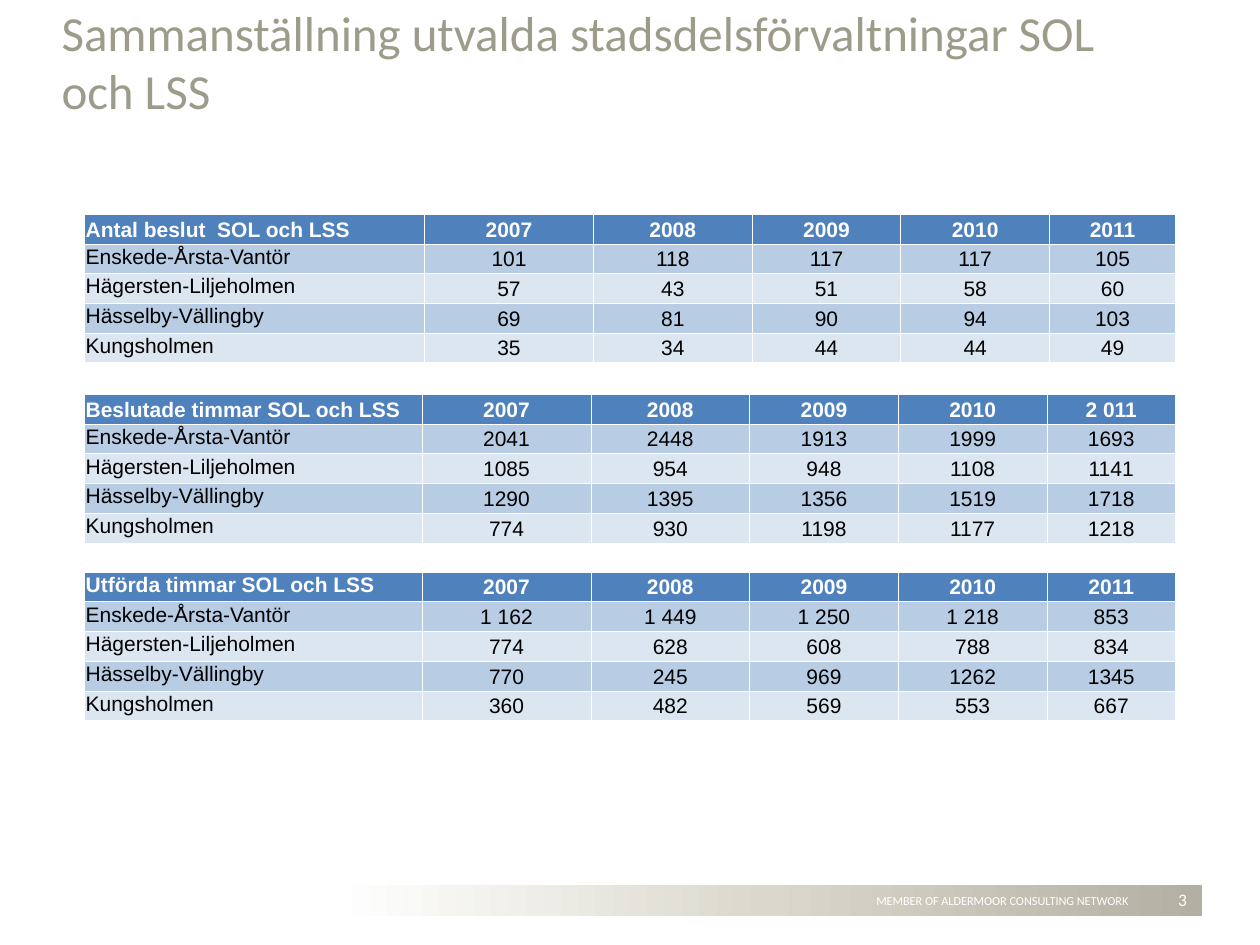
from copy import deepcopy

from lxml.etree import SubElement
from pptx import Presentation
from pptx.dml.color import RGBColor
from pptx.enum.shapes import MSO_SHAPE
from pptx.enum.text import MSO_ANCHOR, MSO_AUTO_SIZE, PP_ALIGN
from pptx.oxml.ns import qn
from pptx.util import Inches, Pt

COLORS = {
    "title": "9D9B8A",
    "white": "FFFFFF",
    "black": "000000",
    "header": "4F81BD",
    "dark_band": "B8CCE4",
    "light_band": "DCE6F1",
    "footer_dark": "B2B0A2",
    "footer_middle": "DAD8CC",
}
GRID_COLUMNS, GRID_ROWS = 100, 75
TABLE_LEFT, ROW_HEIGHT = 6.7, 2.36
YEARS = ["2007", "2008", "2009", "2010", "2011"]
DISTRICTS = ["Enskede-Årsta-Vantör", "Hägersten-Liljeholmen",
             "Hässelby-Vällingby", "Kungsholmen"]
YEAR_WIDTHS = [13.4, 12.6, 11.8, 11.8]
TABLES = [
    ("Antal beslut  SOL och LSS", YEARS, 17, [27, *YEAR_WIDTHS, 10], MSO_ANCHOR.MIDDLE, [
        ["101", "118", "117", "117", "105"],
        ["57", "43", "51", "58", "60"],
        ["69", "81", "90", "94", "103"],
        ["35", "34", "44", "44", "49"],
    ]),
    ("Beslutade timmar SOL och LSS", [*YEARS[:-1], "2 011"], 31.3,
     [26.8, *YEAR_WIDTHS, 10.2], MSO_ANCHOR.MIDDLE, [
        ["2041", "2448", "1913", "1999", "1693"],
        ["1085", "954", "948", "1108", "1141"],
        ["1290", "1395", "1356", "1519", "1718"],
        ["774", "930", "1198", "1177", "1218"],
    ]),
    ("Utförda timmar SOL och LSS", YEARS, 45.4,
     [26.8, *YEAR_WIDTHS, 10.2], MSO_ANCHOR.TOP, [
        ["1 162", "1 449", "1 250", "1 218", "853"],
        ["774", "628", "608", "788", "834"],
        ["770", "245", "969", "1262", "1345"],
        ["360", "482", "569", "553", "667"],
    ]),
]


class SlideBuilder:
    def __init__(self, deck):
        self.slide = deck.slides.add_slide(deck.slide_layouts[6])
        self.column = deck.slide_width / GRID_COLUMNS
        self.row = deck.slide_height / GRID_ROWS

    def place(self, left, top, width, height):
        return (round(left * self.column), round(top * self.row),
                round(width * self.column), round(height * self.row))

    def color(self, name):
        return RGBColor.from_string(COLORS[name])

    def style(self, para, font, size, color, align, bold=False):
        para.alignment = align
        para.font.name = font
        para.font.size = Pt(size)
        para.font.bold = bold
        para.font.color.rgb = self.color(color)

    def text(self, area, words, size, color, align, anchor, wrap=True):
        frame = self.slide.shapes.add_textbox(*self.place(*area)).text_frame
        frame.word_wrap = wrap
        frame.auto_size = MSO_AUTO_SIZE.NONE if wrap else MSO_AUTO_SIZE.SHAPE_TO_FIT_TEXT
        frame.vertical_anchor = anchor
        frame.text = words
        self.style(frame.paragraphs[0], "Calibri", size, color, align)

    def gradient_bar(self, area, color_names):
        bar = self.slide.shapes.add_shape(MSO_SHAPE.RECTANGLE, *self.place(*area))
        bar.shadow.inherit = False
        bar.line.fill.background()
        bar.fill.gradient()
        bar.fill.gradient_angle = 180
        stop_list = next(bar.element.iter(qn("a:gsLst")))
        stop_list.insert(1, deepcopy(stop_list[0]))
        for index, (stop, name) in enumerate(zip(bar.fill.gradient_stops, color_names)):
            stop.position = index / (len(color_names) - 1)
            stop.color.rgb = self.color(name)

    def cell(self, cell, words, fill, color, align, anchor, bold):
        cell.margin_left = cell.margin_right = cell.margin_top = Inches(0.01)
        cell.margin_bottom = 0
        cell.vertical_anchor = anchor
        cell.text = words
        self.style(cell.text_frame.paragraphs[0], "Arial", 12, color, align, bold)
        properties = cell._tc.get_or_add_tcPr()
        for side in ("lnL", "lnR", "lnT", "lnB"):
            border = SubElement(properties, qn(f"a:{side}"), w=str(Pt(0.5)))
            paint = SubElement(border, qn("a:solidFill"))
            SubElement(paint, qn("a:srgbClr"), val=COLORS["white"])
        cell.fill.solid()
        cell.fill.fore_color.rgb = self.color(fill)

    def table(self, heading, years, top, widths, heading_anchor, values):
        rows = [[heading, *years]]
        rows += [[name, *numbers] for name, numbers in zip(DISTRICTS, values)]
        area = self.place(TABLE_LEFT, top, sum(widths), ROW_HEIGHT * len(rows))
        table = self.slide.shapes.add_table(len(rows), len(widths), *area).table
        table.first_row = table.horz_banding = False
        for column, width in zip(table.columns, widths):
            column.width = round(width * self.column)
        for r, row in enumerate(rows):
            is_header = r == 0
            fill = "header" if is_header else "dark_band" if r % 2 else "light_band"
            color = "white" if is_header else "black"
            label_anchor = heading_anchor if is_header else MSO_ANCHOR.TOP
            for c, words in enumerate(row):
                align = PP_ALIGN.CENTER if c else PP_ALIGN.LEFT
                anchor = MSO_ANCHOR.MIDDLE if c else label_anchor
                self.cell(table.cell(r, c), words, fill, color, align, anchor, is_header)


def main():
    deck = Presentation()
    deck.slide_width, deck.slide_height = Inches(10), Inches(7.5)
    page = SlideBuilder(deck)
    page.gradient_bar((26.6, 70.2, 68.8, 2.5), ["footer_dark", "footer_middle", "white"])
    page.text((66.5, 70.4, 26.1, 2.2), "MEMBER OF ALDERMOOR CONSULTING NETWORK",
              7, "white", PP_ALIGN.CENTER, MSO_ANCHOR.TOP, wrap=False)
    page.text((3.9, 2.1, 89.4, 7.9),
              "Sammanställning utvalda stadsdelsförvaltningar SOL och LSS",
              28, "title", PP_ALIGN.LEFT, MSO_ANCHOR.BOTTOM)
    page.text((90.6, 70.1, 4.6, 2.5), "3", 10, "white", PP_ALIGN.RIGHT, MSO_ANCHOR.MIDDLE)
    for table in TABLES:
        page.table(*table)
    deck.save("out.pptx")


if __name__ == "__main__":
    main()
